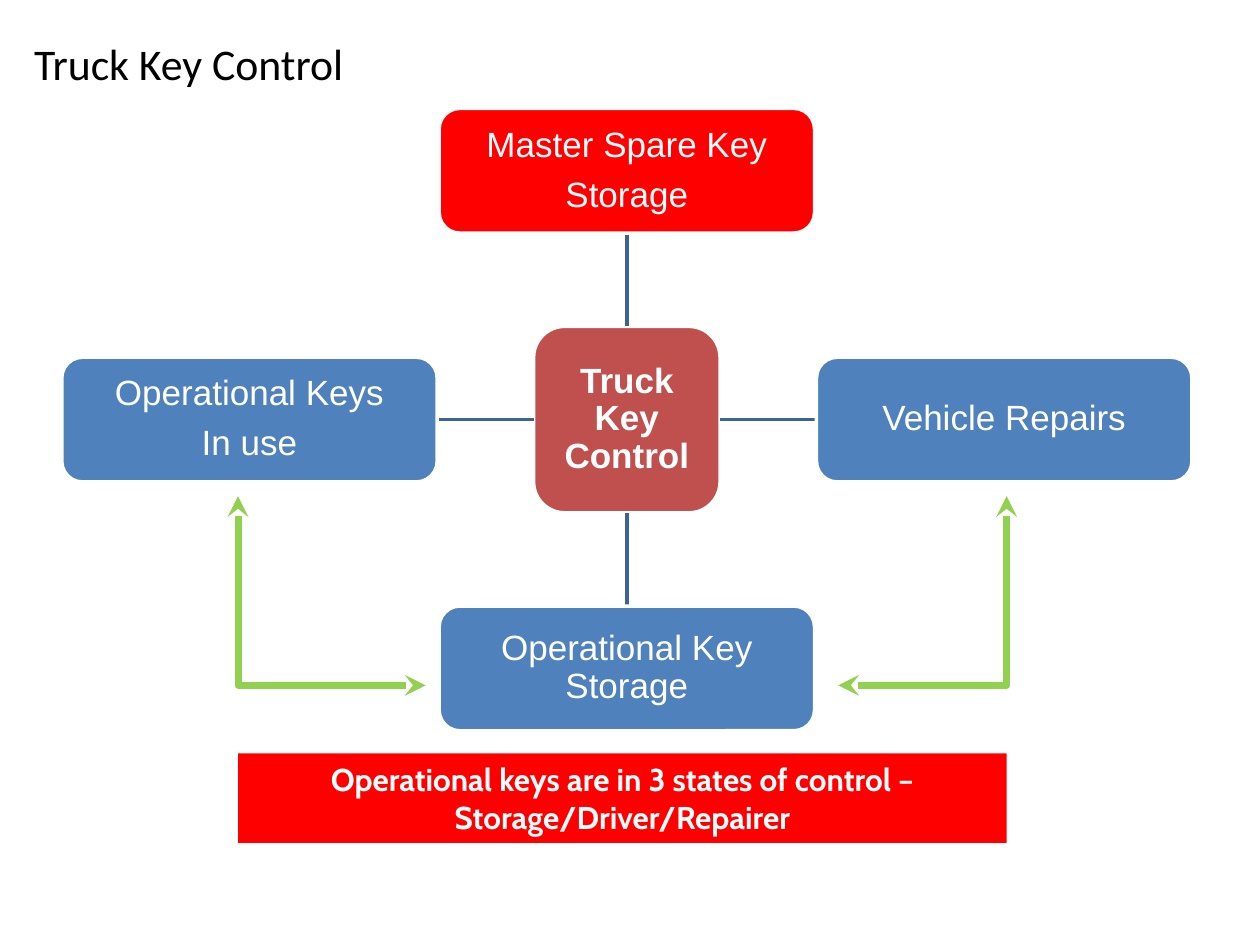
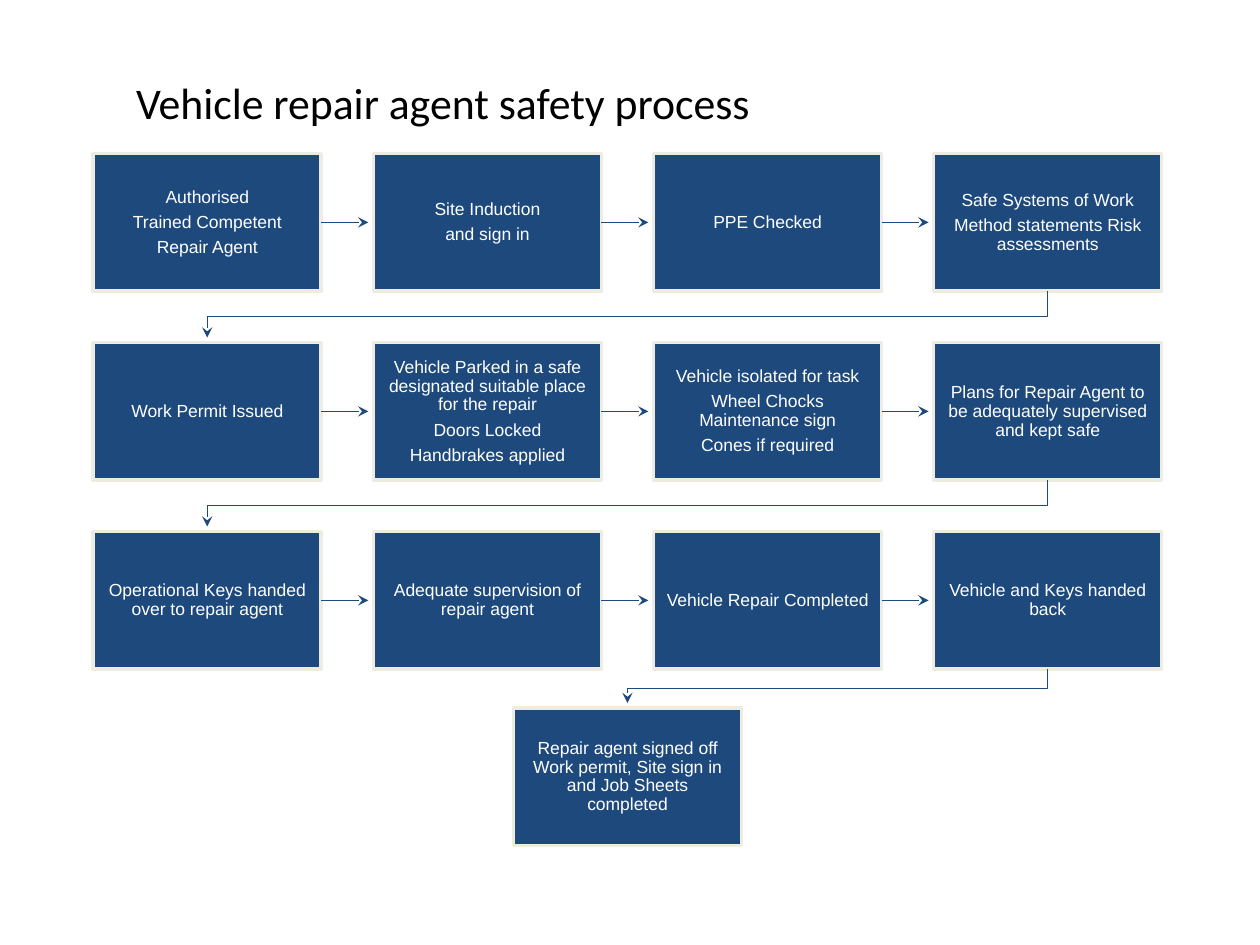
from dataclasses import dataclass

from lxml.etree import SubElement
from pptx import Presentation
from pptx.dml.color import RGBColor
from pptx.enum.shapes import MSO_CONNECTOR as Connector, MSO_SHAPE as Shape
from pptx.enum.text import MSO_ANCHOR as Anchor, MSO_AUTO_SIZE as AutoSize, PP_ALIGN as Align
from pptx.oxml.ns import qn
from pptx.util import Inches, Pt

COLUMN = Inches(10) / 100
ROW = Inches(7.5) / 75


@dataclass(frozen=True)
class Theme:
    black: str = "000000"
    white: str = "FFFFFF"
    red: str = "FF0000"
    hub: str = "C0504D"
    node: str = "4F81BD"
    spoke: str = "3B6495"
    exchange: str = "92D050"
    step: str = "1D497D"
    step_edge: str = "EEECE0"
    title_font: str = "Calibri"
    body_font: str = "Arial"
    banner_font: str = "Cabin"
    title_size: float = 25
    node_size: float = 20
    banner_size: float = 18
    step_size: float = 10


THEME = Theme()


@dataclass(frozen=True)
class Box:
    left: float
    top: float
    width: float
    height: float

    def at(self, across, down):
        return self.left + across * self.width, self.top + down * self.height

    def lengths(self):
        return (round(self.left * COLUMN), round(self.top * ROW),
                round(self.width * COLUMN), round(self.height * ROW))


def centred(point, width, height):
    return Box(point[0] - width / 2, point[1] - height / 2, width, height)


def to_emu(point):
    return round(point[0] * COLUMN), round(point[1] * ROW)


def set_all(target, values):
    for name, value in values.items():
        setattr(target, name, value)


def write(frame, paragraphs, font, size, color, bold=False, align=Align.CENTER,
          spacing=0.9, margins=(0.06, 0.06)):
    across, down = (Inches(margin) for margin in margins)
    set_all(frame, {
        "word_wrap": True, "auto_size": AutoSize.NONE, "vertical_anchor": Anchor.MIDDLE,
        "margin_left": across, "margin_right": across,
        "margin_top": down, "margin_bottom": down,
    })
    for index, text in enumerate(paragraphs):
        paragraph = frame.add_paragraph() if index else frame.paragraphs[0]
        paragraph.text = text
        set_all(paragraph, {
            "alignment": align, "line_spacing": spacing,
            "space_before": Pt(size * 0.35 if index else 0),
        })
        for run in paragraph.runs:
            set_all(run.font, {"name": font, "size": Pt(size), "bold": bold})
            run.font.color.rgb = RGBColor.from_string(color)


def draw_line(slide, points, color, width, ends=()):
    start, *others = [to_emu(point) for point in points]
    if len(others) == 1:
        line = slide.shapes.add_connector(Connector.STRAIGHT, *start, *others[0])
    else:
        builder = slide.shapes.build_freeform(*start, scale=1.0)
        builder.add_line_segments(others, close=False)
        line = builder.convert_to_shape()
        line.fill.background()
    line.line.color.rgb = RGBColor.from_string(color)
    line.line.width = Pt(width)
    properties = line._element.spPr
    for end in ends:
        SubElement(properties.find(qn("a:ln")), qn(f"a:{end}"), type="stealth")
    SubElement(properties, qn("a:effectLst"))


def draw_block(slide, box, kind, fill, paragraphs, edge=None, **text_format):
    shape = slide.shapes.add_shape(kind, *box.lengths())
    shape.shadow.inherit = False
    shape.fill.solid()
    shape.fill.fore_color.rgb = RGBColor.from_string(fill)
    if edge:
        shape.line.color.rgb = RGBColor.from_string(edge)
        shape.line.width = Pt(2)
    else:
        shape.line.fill.background()
    write(shape.text_frame, paragraphs, color=THEME.white, **text_format)


def add_titled_slide(presentation, title, box):
    slide = presentation.slides.add_slide(presentation.slide_layouts[5])
    shape = slide.shapes.title
    set_all(shape, dict(zip(("left", "top", "width", "height"), box.lengths())))
    write(shape.text_frame, [title], THEME.title_font, THEME.title_size, THEME.black,
          align=Align.LEFT, spacing=1.0, margins=(0.1, 0.1))
    return slide


def draw_hub(slide, region):
    node_width, node_height, hub_side = 29.8, 9.9, 14.8
    node_format = {"kind": Shape.ROUNDED_RECTANGLE, "edge": THEME.white,
                   "font": THEME.body_font, "size": THEME.node_size}
    middle = region.at(0.5, 0.5)
    hub = centred(middle, hub_side, hub_side)
    draw_block(slide, hub, fill=THEME.hub, paragraphs=["Truck Key Control"],
               bold=True, **node_format)
    nodes = [
        (0.5, 0, THEME.red, ["Master Spare Key", "Storage"]),
        (1, 0.5, THEME.node, ["Vehicle Repairs"]),
        (0.5, 1, THEME.node, ["Operational Key Storage"]),
        (0, 0.5, THEME.node, ["Operational Keys", "In use"]),
    ]
    for across, down, fill, paragraphs in nodes:
        node = Box(region.left + across * (region.width - node_width),
                   region.top + down * (region.height - node_height),
                   node_width, node_height)
        draw_line(slide, [hub.at(across, down), node.at(1 - across, 1 - down)],
                  THEME.spoke, 2)
        draw_block(slide, node, fill=fill, paragraphs=paragraphs, **node_format)
    for outer, inner in ((0.836, 0.687), (0.156, 0.322)):
        draw_line(slide, [region.at(outer, 0.623), region.at(outer, 0.927),
                          region.at(inner, 0.927)],
                  THEME.exchange, 4, ends=("headEnd", "tailEnd"))


def draw_banner(slide, box, text):
    draw_block(slide, box, Shape.RECTANGLE, THEME.red, [text], font=THEME.banner_font,
               size=THEME.banner_size, bold=True, spacing=1.0, margins=(0.1, 0.05))


def draw_flow(slide, region, rows, last_step):
    step_width, step_height, clearance = 18.1, 10.9, 0.4
    column_pitch = (region.width - step_width) / 3
    row_pitch, last_pitch = 15, 14

    def draw_step(left, top, paragraphs):
        step = Box(left, top, step_width, step_height)
        draw_block(slide, step, Shape.RECTANGLE, THEME.step, paragraphs,
                   edge=THEME.step_edge, font=THEME.body_font, size=THEME.step_size,
                   margins=(0.08, 0.08))
        return step

    def draw_arrow(*points):
        draw_line(slide, points, THEME.step, 0.75, ends=("tailEnd",))

    def draw_turn(start, end):
        half = (start[1] + end[1]) / 2
        draw_arrow(start, (start[0], half), (end[0], half), (end[0], end[1] - clearance))

    previous = None
    for row_index, row in enumerate(rows):
        for column_index, paragraphs in enumerate(row):
            step = draw_step(region.left + column_index * column_pitch,
                             region.top + row_index * row_pitch, paragraphs)
            if column_index:
                x, y = step.at(0, 0.5)
                draw_arrow(previous.at(1, 0.5), (x - clearance, y))
            elif previous:
                draw_turn(previous.at(0.5, 1), step.at(0.5, 0))
            previous = step
    final = draw_step(region.at(0.5, 0)[0] - step_width / 2, previous.top + last_pitch,
                      last_step)
    draw_turn(previous.at(0.5, 1), final.at(0.5, 0))


STEPS = [
    [["Authorised", "Trained Competent", "Repair Agent"],
     ["Site Induction", "and sign in"],
     ["PPE Checked"],
     ["Safe Systems of Work", "Method statements Risk assessments"]],
    [["Work Permit Issued"],
     ["Vehicle Parked in a safe designated suitable place for the repair",
      "Doors Locked", "Handbrakes applied"],
     ["Vehicle isolated for task", "Wheel Chocks Maintenance sign", "Cones if required"],
     ["Plans for Repair Agent to be adequately supervised and kept safe"]],
    [["Operational Keys handed over to repair agent"],
     ["Adequate supervision of repair agent"],
     ["Vehicle Repair Completed"],
     ["Vehicle and Keys handed back"]],
]
LAST_STEP = ["Repair agent signed off Work permit, Site sign in and Job Sheets\vcompleted"]


def main():
    presentation = Presentation()
    presentation.slide_width = round(100 * COLUMN)
    presentation.slide_height = round(75 * ROW)

    control = add_titled_slide(presentation, "Truck Key Control", Box(1.7, 0.8, 70, 8.4))
    draw_hub(control, Box(4.9, 8.6, 89.7, 49.4))
    draw_banner(control, Box(18.9, 59.8, 61, 7.1),
                "Operational keys are in 3 states of control – Storage/Driver/Repairer")

    process = add_titled_slide(presentation, "Vehicle repair agent safety process",
                               Box(9.8, 3.9, 70, 8.4))
    draw_flow(process, Box(7.4, 12.2, 84.8, 54.9), STEPS, LAST_STEP)

    presentation.save("out.pptx")


if __name__ == "__main__":
    main()
